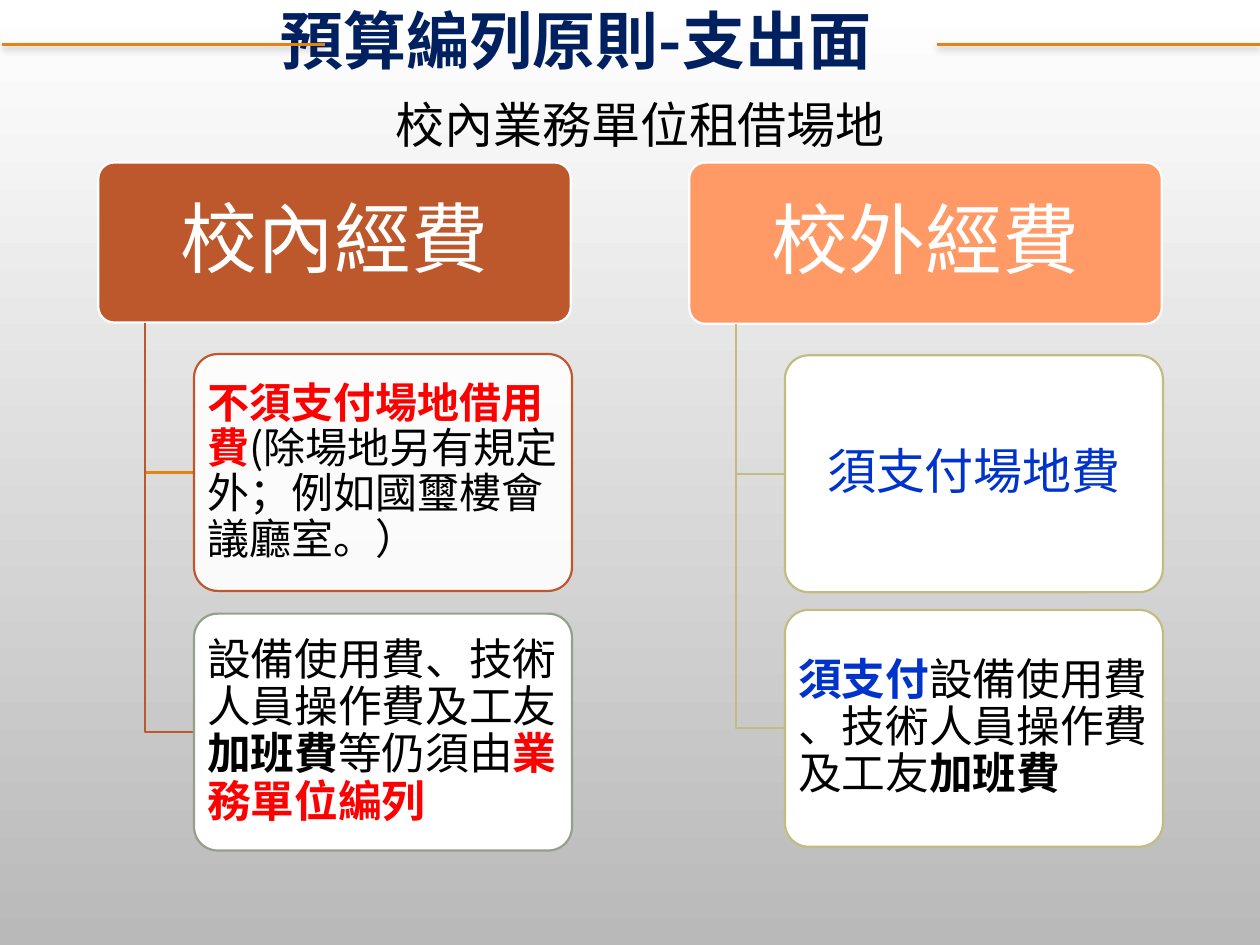
import dataclasses
import pptx
import pptx.dml.color
import pptx.enum.shapes
import pptx.enum.text
import pptx.oxml
import pptx.oxml.ns
import pptx.util
from lxml import etree

Inches = pptx.util.Inches
Pt = pptx.util.Pt
Align = pptx.enum.text.PP_ALIGN
Anchor = pptx.enum.text.MSO_ANCHOR
Shape = pptx.enum.shapes.MSO_SHAPE
qn = pptx.oxml.ns.qn


@dataclasses.dataclass(frozen=True)
class Theme:
    """Colours, fonts and type sizes of the slide."""
    cjk: str = "Noto Sans CJK SC"
    latin: str = "Arial"
    white: str = "FFFFFF"
    black: str = "000000"
    gray: str = "B9B9B9"
    navy: str = "002060"
    blue: str = "0033CC"
    red: str = "FF0000"
    rust: str = "BD582C"
    peach: str = "FF9966"
    orange: str = "E48312"
    sage: str = "94A088"
    khaki: str = "C2BC80"
    title: int = 36
    head: int = 44
    large: int = 28
    body: int = 25
    small: int = 24
    edge: float = 1.25
    rule: float = 1.75


T = Theme()


def rgb(code):
    """Return the colour for a hex code."""
    return pptx.dml.color.RGBColor.from_string(code)


def write(frame, paras, size, align=Align.LEFT, face=T.cjk, lead=None, after=0):
    """Fill a text frame with paragraphs of (text, colour, bold) runs."""
    for i, parts in enumerate(paras):
        para = frame.add_paragraph() if i else frame.paragraphs[0]
        para.alignment = align
        para.line_spacing = lead
        para.space_after = Pt(after)
        for text, color, bold in parts:
            run = para.add_run()
            run.text = text
            font = run.font
            font.size, font.bold, font.name = Pt(size), bold, face
            font.color.rgb = rgb(color)
            etree.SubElement(font._element, qn("a:ea"), typeface=T.cjk)


def label(slide, box, paras, size, **style):
    """Add a text box that does not wrap."""
    frame = slide.shapes.add_textbox(*map(Inches, box)).text_frame
    frame.word_wrap = False
    write(frame, paras, size, **style)
    return frame


def card(slide, box, fill, line, paras, size, align, gap=0.35, alpha=None):
    """Add a rounded box with its text."""
    shape = slide.shapes.add_shape(Shape.ROUNDED_RECTANGLE, *map(Inches, box))
    shape.shadow.inherit = False
    shape.adjustments[0] = 0.1
    shape.fill.solid()
    shape.fill.fore_color.rgb = rgb(fill)
    if alpha:
        color = shape.fill._xPr.find(".//" + qn("a:srgbClr"))
        etree.SubElement(color, qn("a:alpha"), val=str(alpha * 1000))
    shape.line.color.rgb = rgb(line)
    shape.line.width = Pt(T.edge)
    frame = shape.text_frame
    frame.word_wrap = True
    frame.vertical_anchor = Anchor.MIDDLE
    frame.margin_left = frame.margin_right = Inches(0.05)
    frame.margin_top = frame.margin_bottom = Inches(0.03)
    write(frame, paras, size, align, lead=0.9, after=gap * size)


def branch(slide, start, end, color):
    """Draw a bent line down from start and across to end."""
    (x, y), (right, low) = start, end
    pen = slide.shapes.build_freeform(Inches(x), Inches(y))
    pen.add_line_segments(
        [(Inches(x), Inches(low)), (Inches(right), Inches(low))], close=False)
    shape = pen.convert_to_shape()
    shape.shadow.inherit = False
    shape.fill.background()
    shape.line.color.rgb = rgb(color)
    shape.line.width = Pt(T.edge)


def column(slide, box, name, fill, items):
    """Add a heading box and the boxes that hang from it."""
    left, top, width, height = box
    tall = 1.88
    card(slide, box, fill, T.white, [[(name, T.white, False)]], T.head, Align.CENTER)
    for drop, stem, look in items:
        x, y = left + 0.76, top + drop
        branch(slide, (left + 0.37, top + height), (x, y + tall / 2), stem)
        card(slide, (x, y, width - 0.75, tall), T.white, **look)


def header(slide, box):
    """Add the title with a rule on each side, and the subtitle."""
    left, top, width, height = box
    label(slide, (2.13, top - 0.04, 5.41, 0.71),
          [[("預算編列原則-支出面", T.navy, True)]], T.title)
    span = 2.56
    for x in (left + 0.02, left + width - span):
        ends = (x, top + 0.35, x + span, top + 0.35)
        line = slide.shapes.add_connector(
            pptx.enum.shapes.MSO_CONNECTOR.STRAIGHT, *map(Inches, ends))
        line.line.color.rgb = rgb(T.orange)
        line.line.width = Pt(T.rule)
        glow = etree.SubElement(line._element.spPr, qn("a:effectLst"))
        shade = etree.SubElement(glow, qn("a:outerShdw"), blurRad=str(Pt(4)),
                                 dist=str(Pt(2)), dir="5400000", rotWithShape="0")
        color = etree.SubElement(shade, qn("a:srgbClr"), val=T.black)
        etree.SubElement(color, qn("a:alpha"), val="28000")
    frame = label(slide, (2.54, top + 0.69, 5.08, height - 0.69),
                  [[("校內業務單位租借場地", T.black, False)]], T.large,
                  align=Align.CENTER, face=T.latin)
    frame.vertical_anchor = Anchor.MIDDLE


def main():
    """Build the slide and save it."""
    deck = pptx.Presentation()
    deck.slide_width, deck.slide_height = Inches(10), Inches(7.5)
    slide = deck.slides.add_slide(deck.slide_layouts[6])
    fill = slide.background.fill
    fill.gradient()
    fill.gradient_angle = 270
    for stop, color, place in zip(fill.gradient_stops, (T.white, T.gray), (0, 1)):
        stop.color.rgb = rgb(color)
        stop.position = place

    free = [[("不須支付場地借用費", T.red, True),
             ("(除場地另有規定外；例如國璽樓會議廳室。）", T.black, False)]]
    staff = [[("設備使用費、技術人員操作費及工友", T.black, False),
              ("加班費", T.black, True),
              ("等仍須由", T.black, False),
              ("業務單位編列", T.red, True)]]
    rent = [[("須支付場地費", T.blue, False)]]
    gear = [[("須支付", T.blue, True), ("設備使用費", T.black, False)],
            [("、技術人員操作費及工友", T.black, False), ("加班費", T.black, True)]]

    column(slide, (0.78, 1.29, 3.75, 1.27), "校內經費", T.rust, [
        (1.52, T.orange, dict(line=T.rust, paras=free, size=T.small,
                              align=Align.LEFT, alpha=90)),
        (3.58, T.rust, dict(line=T.sage, paras=staff, size=T.body,
                            align=Align.LEFT))])
    column(slide, (5.47, 1.29, 3.75, 1.28), "校外經費", T.peach, [
        (1.53, T.khaki, dict(line=T.khaki, paras=rent, size=T.large,
                             align=Align.CENTER)),
        (3.55, T.khaki, dict(line=T.khaki, paras=gear, size=T.body,
                             align=Align.LEFT, gap=0))])
    header(slide, (0, 0, 10, 1.27))
    deck.save("out.pptx")


if __name__ == "__main__":
    main()
